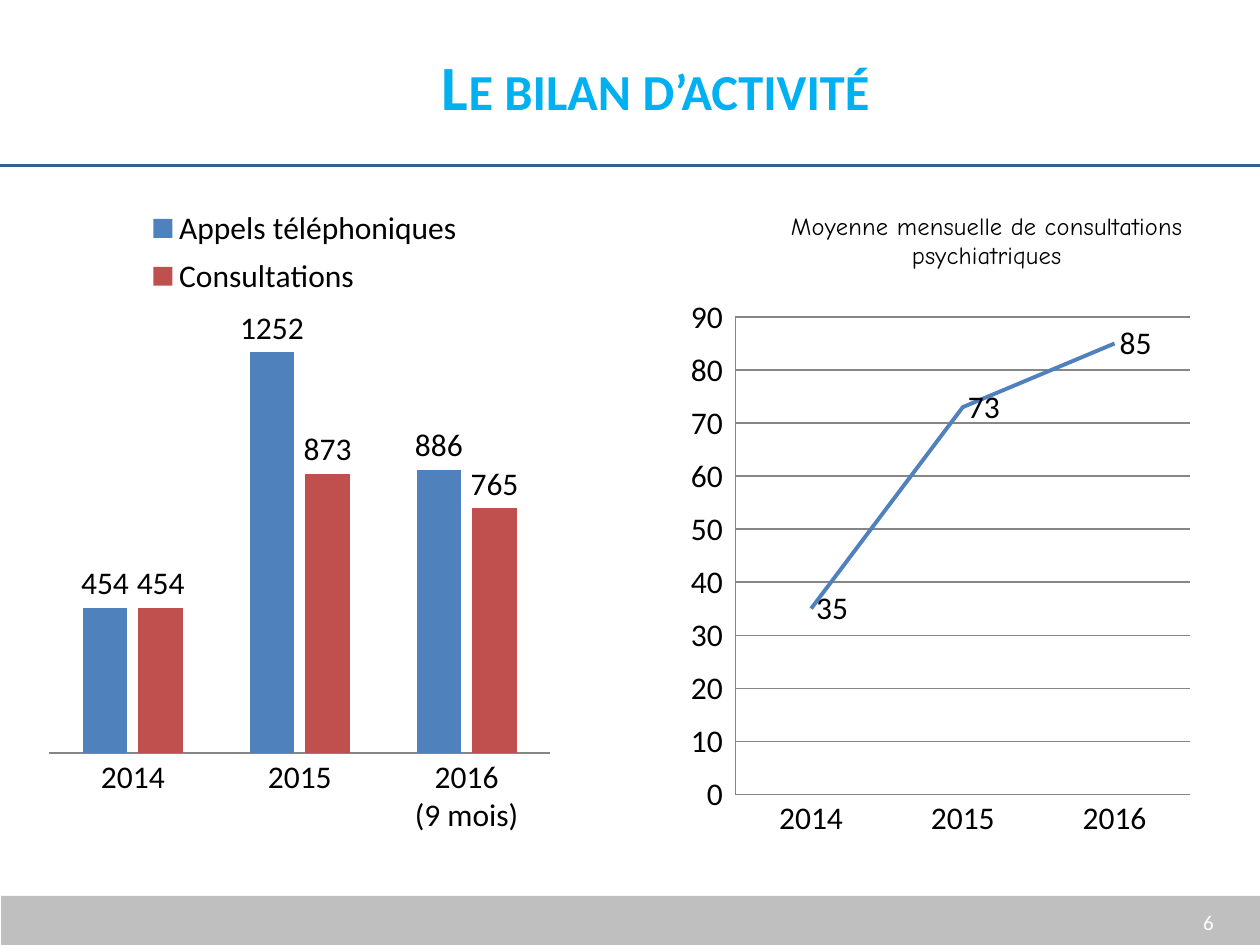
from pptx import Presentation
from pptx.chart.data import CategoryChartData
from pptx.dml.color import RGBColor
from pptx.enum.chart import (XL_CHART_TYPE, XL_LABEL_POSITION, XL_LEGEND_POSITION,
                             XL_TICK_LABEL_POSITION, XL_TICK_MARK)
from pptx.enum.shapes import MSO_CONNECTOR, MSO_SHAPE
from pptx.enum.text import MSO_ANCHOR, PP_ALIGN
from pptx.oxml import parse_xml
from pptx.oxml.ns import nsdecls, qn
from pptx.util import Inches, Pt

COLUMNS, LINES = XL_CHART_TYPE.COLUMN_CLUSTERED, XL_CHART_TYPE.LINE_STACKED
OUTSIDE, RIGHT = XL_LABEL_POSITION.OUTSIDE_END, XL_LABEL_POSITION.RIGHT
TOP = XL_LEGEND_POSITION.TOP
NO_TICK = XL_TICK_MARK.NONE
LOW = XL_TICK_LABEL_POSITION.LOW
STRAIGHT, RECT = MSO_CONNECTOR.STRAIGHT, MSO_SHAPE.RECTANGLE
MIDDLE, CENTER = MSO_ANCHOR.MIDDLE, PP_ALIGN.CENTER

BLACK = RGBColor(0x00, 0x00, 0x00)
WHITE = RGBColor(0xFF, 0xFF, 0xFF)
CYAN = RGBColor(0x00, 0xB0, 0xF0)
NAVY = RGBColor(0x37, 0x60, 0x92)
BLUE = RGBColor(0x4F, 0x81, 0xBD)
RED = RGBColor(0xC0, 0x50, 0x4D)
SILVER = RGBColor(0xBF, 0xBF, 0xBF)
GRAY = RGBColor(0x86, 0x86, 0x86)

TITLE_FONT = {"name": "Calibri", "size": Pt(36), "bold": True}
NUMBER_FONT = {"name": "Calibri", "size": Pt(12)}
CHART_FONT = {"name": "Calibri", "size": Pt(18)}
CHART_TITLE_FONT = {"name": "Comic Neue", "size": Pt(14), "bold": False}


def format_font(font, values, color):
    for name, value in values.items():
        setattr(font, name, value)
    font.color.rgb = color


def add_title(s, text):
    sp = s.shapes.title
    sp.left, sp.top, sp.width, sp.height = map(Inches, (1.3, 0.13, 7.81, 1.09))
    tf = sp.text_frame
    tf.vertical_anchor = MIDDLE
    p = tf.paragraphs[0]
    p.alignment = CENTER
    r = p.add_run()
    r.text = text
    format_font(r.font, TITLE_FONT, CYAN)
    r._r.get_or_add_rPr().set("cap", "small")


def add_footer(s, number):
    bar = s.shapes.add_shape(RECT, Inches(0.01), Inches(7.11), Inches(10), Inches(0.42))
    bar.shadow.inherit = False
    bar.fill.solid()
    bar.fill.fore_color.rgb = SILVER
    bar.line.fill.background()
    box = s.shapes.add_textbox(Inches(9.45), Inches(7.14), Inches(0.51), Inches(0.36))
    tf = box.text_frame
    tf.word_wrap = True
    tf.vertical_anchor = MIDDLE
    r = tf.paragraphs[0].add_run()
    r.text = number
    format_font(r.font, NUMBER_FONT, WHITE)


def add_rule(s):
    line = s.shapes.add_connector(STRAIGHT, Inches(-0.03), Inches(1.31), Inches(10), Inches(1.31))
    line.line.color.rgb = NAVY
    line.line.width = Pt(1.75)
    line._element.spPr.append(parse_xml(f"<a:effectLst {nsdecls('a')}/>"))


def place(element, index, **fractions):
    for old in element.findall(qn("c:layout")):
        element.remove(old)
    target = '<c:layoutTarget val="inner"/>' if element.tag == qn("c:plotArea") else ""
    modes = '<c:xMode val="edge"/><c:yMode val="edge"/>'
    sizes = "".join(f'<c:{name} val="{value}"/>' for name, value in fractions.items())
    element.insert(index, parse_xml(
        f"<c:layout {nsdecls('c')}><c:manualLayout>{target}{modes}{sizes}"
        "</c:manualLayout></c:layout>"))


def add_chart(s, kind, bounds, categories, series, label_position):
    data = CategoryChartData()
    data.categories = categories
    for name, values in series:
        data.add_series(name, values)
    chart = s.shapes.add_chart(kind, *map(Inches, bounds), data).chart
    format_font(chart.font, CHART_FONT, BLACK)
    chart.has_title = False
    chart.has_legend = False
    for axis in (chart.category_axis, chart.value_axis):
        axis.major_tick_mark = axis.minor_tick_mark = NO_TICK
        axis.format.line.color.rgb = GRAY
    plot = chart.plots[0]
    plot.vary_by_categories = False
    plot.has_data_labels = True
    labels = plot.data_labels
    labels.show_value = True
    labels.position = label_position
    format_font(labels.font, CHART_FONT, BLACK)
    return chart


def add_activity_chart(s):
    series = [("Appels téléphoniques", (454, 1252, 886)), ("Consultations", (454, 873, 765))]
    chart = add_chart(s, COLUMNS, (0.31, 1.48, 4.14, 5.23),
                      ("2014", "2015", "2016\n(9 mois)"), series, OUTSIDE)
    plot = chart.plots[0]
    plot.gap_width = 150
    plot.overlap = -25
    for bars, color in zip(plot.series, (BLUE, RED)):
        bars.format.fill.solid()
        bars.format.fill.fore_color.rgb = color
    axis = chart.value_axis
    axis.visible = False
    axis.has_major_gridlines = False
    axis.minimum_scale, axis.maximum_scale = 0, 1400
    chart.has_legend = True
    chart.legend.position = TOP
    chart.legend.include_in_layout = False
    format_font(chart.legend.font, CHART_FONT, BLACK)
    place(chart.legend._element, 1, x=0.19, y=0.02, w=0.64, h=0.16)
    place(chart._chartSpace.chart.plotArea, 0, x=0.02, y=0.18, w=0.96, h=0.68)


def add_average_chart(s):
    chart = add_chart(s, LINES, (5.47, 1.53, 4.06, 5.19), ("2014", "2015", "2016"),
                      [("Series 1", (35, 73, 85))], RIGHT)
    average = chart.plots[0].series[0]
    average.smooth = False
    average.format.line.color.rgb = BLUE
    average.format.line.width = Pt(2.25)
    axis = chart.value_axis
    axis.has_major_gridlines = True
    axis.major_gridlines.format.line.color.rgb = GRAY
    axis.minimum_scale, axis.maximum_scale, axis.major_unit = 0, 90, 10
    axis.tick_label_position = LOW
    chart.has_title = True
    title = chart.chart_title
    p = title.text_frame.paragraphs[0]
    r = p.add_run()
    r.text = "Moyenne mensuelle de consultations psychiatriques"
    format_font(r.font, CHART_TITLE_FONT, BLACK)
    place(title._element, 1, x=0.19, y=0.02)
    place(chart._chartSpace.chart.plotArea, 0, x=0.09, y=0.19, w=0.89, h=0.73)


def main():
    prs = Presentation()
    prs.slide_width, prs.slide_height = Inches(10), Inches(7.5)
    s = prs.slides.add_slide(prs.slide_layouts[5])
    add_footer(s, "6")
    add_rule(s)
    add_title(s, "Le bilan d’activité")
    add_activity_chart(s)
    add_average_chart(s)
    prs.save("out.pptx")


if __name__ == "__main__":
    main()
